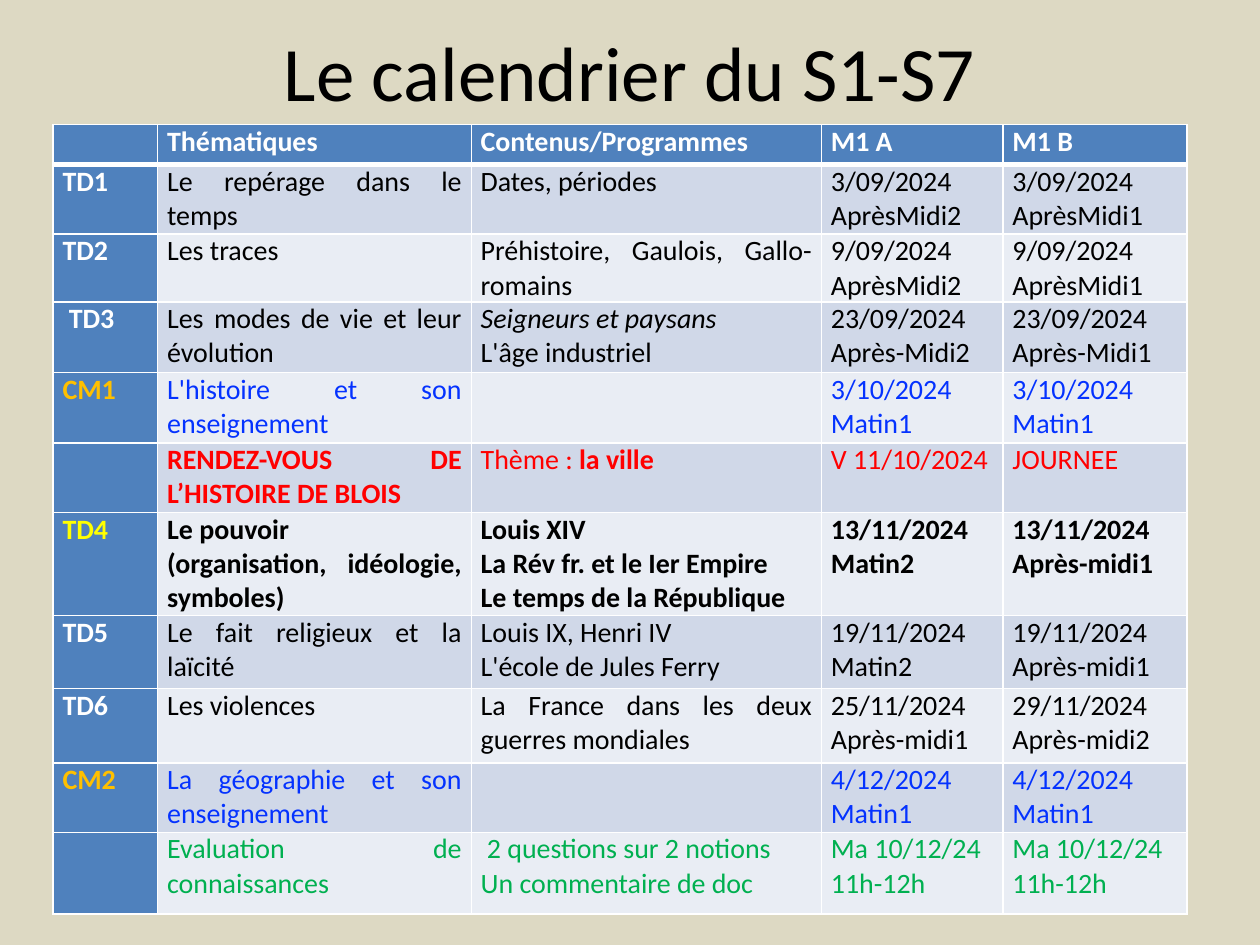
from dataclasses import dataclass

from lxml.etree import SubElement
from pptx import Presentation
from pptx.dml.color import RGBColor
from pptx.enum.text import MSO_ANCHOR as Anchor, PP_ALIGN as Align
from pptx.oxml.ns import qn
from pptx.util import Cm, Pt

FONT = "Calibri"
WHITE, BLACK, BLUE, RED, GREEN = "FFFFFF", "000000", "0432FF", "FF0000", "00B050"
ORANGE, YELLOW = "FFC000", "FFFF00"
SAND, HEADER_FILL, BANDS = "DDD9C3", "4F81BD", ("D0D8E8", "E9EDF4")

COLUMN_WIDTHS = (2.11, 6.32, 7.06, 3.66, 3.71)
ITALIC_MARK, BOLD_MARK = "_", "*"


@dataclass
class Session:
    height: float
    texts: tuple
    color: str = BLACK
    label_color: str = WHITE
    bold: bool = False


SESSIONS = (
    Session(0.81, ("", "Thématiques", "Contenus/Programmes", "M1 A", "M1 B"), WHITE, bold=True),
    Session(1.4, ("TD1", "Le repérage dans le temps", "Dates, périodes",
                  "3/09/2024\nAprèsMidi2", "3/09/2024\nAprèsMidi1")),
    Session(1.37, ("TD2", "Les traces", "Préhistoire, Gaulois, Gallo-romains",
                   "9/09/2024\nAprèsMidi2", "9/09/2024\nAprèsMidi1")),
    Session(1.42, (" TD3", "Les modes de vie et leur évolution",
                   "_Seigneurs et paysans\nL'âge industriel",
                   "23/09/2024\nAprès-Midi2", "23/09/2024\nAprès-Midi1")),
    Session(1.42, ("CM1", "L'histoire et son enseignement", "",
                   "3/10/2024\nMatin1", "3/10/2024\nMatin1"), BLUE, ORANGE),
    Session(1.4, ("", "*RENDEZ-VOUS DE L’HISTOIRE DE BLOIS*", "Thème : *la ville*",
                  "V 11/10/2024", "JOURNEE"), RED),
    Session(2.08, ("TD4", "Le pouvoir \n(organisation, idéologie, symboles)",
                   "Louis XIV\nLa Rév fr. et le Ier Empire\nLe temps de la République",
                   "13/11/2024\nMatin2", "13/11/2024\nAprès-midi1"), BLACK, YELLOW, True),
    Session(1.47, ("TD5", "Le fait religieux et la laïcité",
                   "Louis IX, Henri IV\nL'école de Jules Ferry",
                   "19/11/2024\nMatin2", "19/11/2024\nAprès-midi1")),
    Session(1.5, ("TD6", "Les violences", "La France dans les deux guerres mondiales",
                  "25/11/2024\nAprès-midi1", "29/11/2024\nAprès-midi2")),
    Session(1.4, ("CM2", "La géographie et son enseignement", "",
                  "4/12/2024\nMatin1", "4/12/2024\nMatin1"), BLUE, ORANGE),
    Session(1.65, ("", "Evaluation de connaissances",
                   " 2 questions sur 2 notions\nUn commentaire de doc",
                   "Ma 10/12/24\n11h-12h", "Ma 10/12/24\n11h-12h"), GREEN),
)


def rgb(color):
    return RGBColor.from_string(color)


def set_fill(target, color):
    target.fill.solid()
    target.fill.fore_color.rgb = rgb(color)


def set_font(p, size, color, bold=False):
    p.font.name, p.font.size, p.font.bold = FONT, Pt(size), bold
    p.font.color.rgb = rgb(color)


def set_borders(cell, widths):
    tc_pr = cell._tc.get_or_add_tcPr()
    for i, (side, width) in enumerate(widths.items()):
        ln = tc_pr.makeelement(qn(f"a:ln{side}"), {"w": str(Pt(width))})
        SubElement(SubElement(ln, qn("a:solidFill")), qn("a:srgbClr"), val=WHITE)
        tc_pr.insert(i, ln)


def write_line(p, line, color, bold):
    p.alignment = Align.JUSTIFY
    set_font(p, 16, color, bold)
    if line.startswith(ITALIC_MARK):
        p.font.italic = True
    for i, text in enumerate(line.lstrip(ITALIC_MARK).split(BOLD_MARK)):
        if text:
            r = p.add_run()
            r.text = text
            if i % 2:
                r.font.bold = True


def write_cell(cell, text, color, bold):
    cell.margin_left = cell.margin_right = Cm(0.19)
    cell.margin_top = cell.margin_bottom = 0
    tf = cell.text_frame
    for i, line in enumerate(text.split("\n")):
        p = tf.add_paragraph() if i else tf.paragraphs[0]
        write_line(p, line, color, bold)


def add_title(slide, text):
    sp = slide.shapes.add_textbox(Cm(1.27), 0, Cm(22.86), Cm(2.84))
    tf = sp.text_frame
    tf.word_wrap = True
    tf.vertical_anchor = Anchor.MIDDLE
    p = tf.paragraphs[0]
    p.text = text
    p.alignment = Align.CENTER
    set_font(p, 44, BLACK)


def add_calendar(slide):
    height = sum(session.height for session in SESSIONS)
    table = slide.shapes.add_table(
        len(SESSIONS), len(COLUMN_WIDTHS),
        Cm(1.07), Cm(2.51), Cm(sum(COLUMN_WIDTHS)), Cm(height)).table
    table.first_row = table.horz_banding = False
    for column, width in zip(table.columns, COLUMN_WIDTHS):
        column.width = Cm(width)
    for i, (row, session) in enumerate(zip(table.rows, SESSIONS)):
        row.height = Cm(session.height)
        borders = {"L": 1, "R": 1, "T": 3 if i == 1 else 1, "B": 3 if i == 0 else 1}
        for j, (cell, text) in enumerate(zip(row.cells, session.texts)):
            is_label = j == 0
            set_fill(cell, HEADER_FILL if is_label or i == 0 else BANDS[(i - 1) % 2])
            set_borders(cell, borders)
            color = session.label_color if is_label else session.color
            write_cell(cell, text, color, is_label or session.bold)


def main():
    prs = Presentation()
    prs.slide_width, prs.slide_height = Cm(25.4), Cm(19.05)
    slide = prs.slides.add_slide(prs.slide_layouts[6])
    set_fill(slide.background, SAND)
    add_title(slide, "Le calendrier du S1-S7")
    add_calendar(slide)
    prs.save("out.pptx")


if __name__ == "__main__":
    main()
